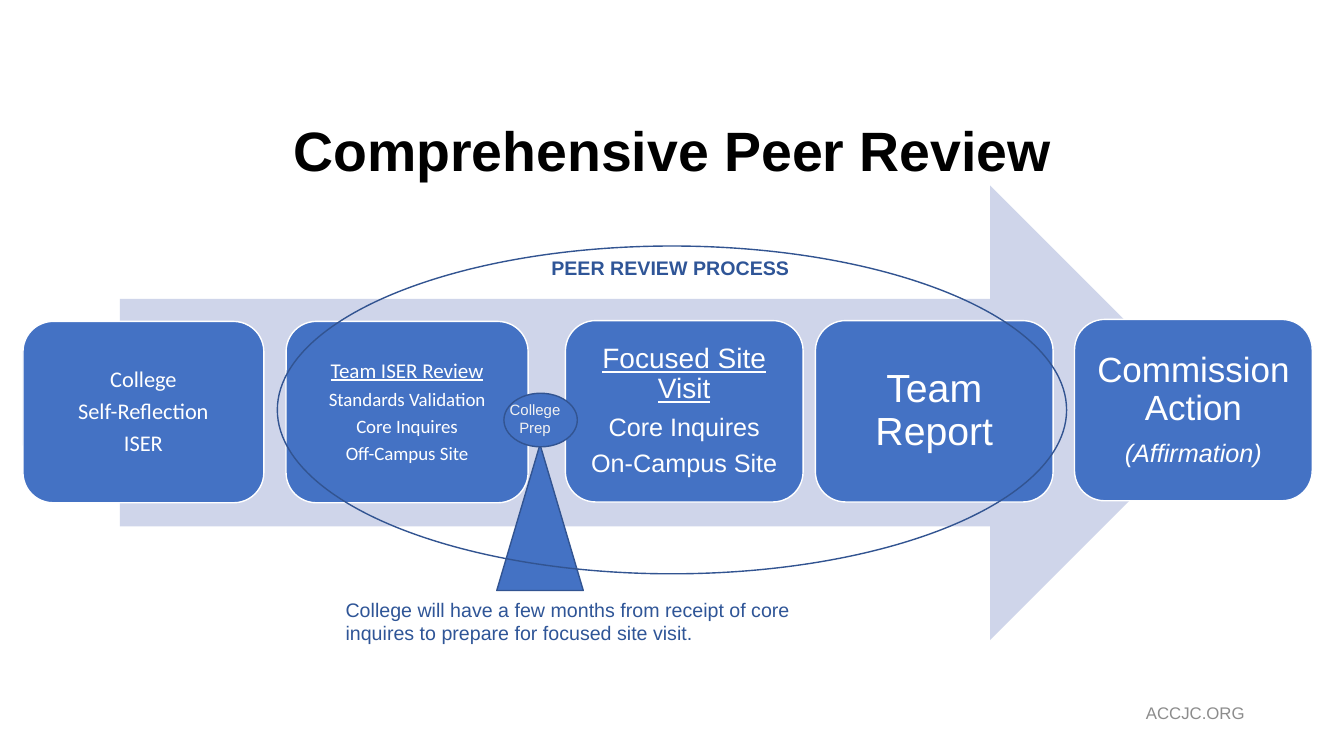
import pptx
import pptx.dml.color
import pptx.enum.shapes
import pptx.enum.text
import pptx.util

Cm = pptx.util.Cm
Pt = pptx.util.Pt
SHAPES = pptx.enum.shapes.MSO_SHAPE
ALIGN = pptx.enum.text.PP_ALIGN
ANCHOR = pptx.enum.text.MSO_ANCHOR

BLUE = "4472C4"
DARK_BLUE = "325491"
CAPTION_BLUE = "2F5597"
PALE_BLUE = "CFD5EA"
WHITE = "FFFFFF"

CARD_HEIGHT = 4.57
CARDS = [
    (0, 0.05, 6.07, 0.18, "Calibri",
     [("College", 16, ""), ("Self-Reflection", 16, ""), ("ISER", 16, "")]),
    (6.63, 0.05, 6.1, 0.16, "Calibri",
     [("Team ISER Review", 15, "underline"), ("Standards Validation", 13.5, ""),
      ("Core Inquires", 13.5, ""), ("Off-Campus Site", 13.5, "")]),
    (13.67, 0.03, 5.99, 0.21, "Arial",
     [("Focused Site Visit", 20, "underline"), ("Core Inquires", 18, ""),
      ("On-Campus Site", 18, "")]),
    (19.97, 0.03, 5.99, 0.3, "Arial", [("Team Report", 28, "")]),
    (26.5, 0, 5.99, 0.25, "Arial",
     [("Commission Action", 25, ""), ("(Affirmation)", 18, "italic")]),
]


def color(hex_string):
    """Turn a hex string into a colour."""
    return pptx.dml.color.RGBColor.from_string(hex_string)


def add_figure(slide, kind, box, fill=None, line=None):
    """Add a preset shape with an optional fill and outline."""
    shape = slide.shapes.add_shape(kind, *map(Cm, box))
    shape.shadow.inherit = False
    if fill:
        shape.fill.solid()
        shape.fill.fore_color.rgb = color(fill)
    else:
        shape.fill.background()
    if line:
        shape.line.color.rgb = color(line)
        shape.line.width = Pt(1)
    else:
        shape.line.fill.background()
    return shape


def set_insets(frame, horizontal, vertical):
    """Set the inner margins of a text frame."""
    frame.margin_left = frame.margin_right = Cm(horizontal)
    frame.margin_top = frame.margin_bottom = Cm(vertical)


def add_label(slide, box, text, size, text_color, align=ALIGN.LEFT,
              anchor=ANCHOR.TOP, bold=False, wrap=True):
    """Add a text box whose paragraphs share one Arial style."""
    frame = slide.shapes.add_textbox(*map(Cm, box)).text_frame
    frame.word_wrap = wrap
    frame.vertical_anchor = anchor
    frame.text = text
    for paragraph in frame.paragraphs:
        paragraph.alignment = align
        font = paragraph.runs[0].font
        font.name, font.size, font.bold = "Arial", Pt(size), bold
        font.color.rgb = color(text_color)
    return frame


def add_card(slide, box, inset, font_name, lines):
    """Add a rounded step card with centred lines of white text."""
    frame = add_figure(slide, SHAPES.ROUNDED_RECTANGLE, box, BLUE, WHITE).text_frame
    frame.word_wrap = True
    frame.vertical_anchor = ANCHOR.MIDDLE
    set_insets(frame, inset, inset)
    frame.text = "\n".join(text for text, size, style in lines)
    for paragraph, (text, size, style) in zip(frame.paragraphs, lines):
        paragraph.alignment = ALIGN.CENTER
        paragraph.line_spacing = 0.9
        paragraph.space_after = Pt(round(0.35 * size, 1))
        font = paragraph.runs[0].font
        font.name, font.size = font_name, Pt(size)
        font.color.rgb = color(WHITE)
        font.underline = style == "underline"
        font.italic = style == "italic"


def add_steps(slide, left, top):
    """Add the row of step cards."""
    for across, down, width, inset, font_name, lines in CARDS:
        box = (left + across, top + down, width, CARD_HEIGHT)
        add_card(slide, box, inset, font_name, lines)


def add_preparation(slide, left, top):
    """Add the preparation marker, its pointer and the caption below."""
    add_figure(slide, SHAPES.FLOWCHART_EXTRACT, (left + 0.05, top + 1.29, 2.18, 3.68),
               BLUE, DARK_BLUE)
    add_figure(slide, SHAPES.OVAL, (left + 0.23, top, 1.85, 1.35), BLUE, DARK_BLUE)
    add_label(slide, (left, top + 0.05, 2.03, 1.17), "College\nPrep", 10.7, "F2F2F2",
              ALIGN.CENTER)
    add_label(slide, (left - 4.01, top + 5.03, 13.16, 1.45),
              "College will have a few months from receipt of core inquires "
              "to prepare for focused site visit.", 14, CAPTION_BLUE)


def add_process_ring(slide, left, top, width, height):
    """Add the outlined ellipse with its heading near the top."""
    add_figure(slide, SHAPES.OVAL, (left, top, width, height), line=DARK_BLUE)
    add_label(slide, (left + (width - 6.58) / 2, top + 0.13, 6.58, 0.86),
              "PEER REVIEW PROCESS", 14, CAPTION_BLUE, bold=True, wrap=False)


def add_title(slide, box):
    """Add the centred slide title."""
    frame = add_label(slide, box, "Comprehensive Peer Review", 39.6, "000000",
                      ALIGN.CENTER, ANCHOR.MIDDLE, bold=True)
    frame.paragraphs[0].line_spacing = 0.9


def add_footer(slide, box):
    """Add the web address at the lower right."""
    frame = add_label(slide, box, "ACCJC.ORG", 12, "8C8C8C", ALIGN.RIGHT, ANCHOR.MIDDLE)
    set_insets(frame, 0.18, 0.1)


def main():
    """Build and save the slide."""
    presentation = pptx.Presentation()
    presentation.slide_width = Cm(33.87)
    presentation.slide_height = Cm(19.05)
    slide = presentation.slides.add_slide(presentation.slide_layouts[6])
    add_footer(slide, (26.95, 17.65, 4.6, 0.64))
    add_figure(slide, SHAPES.RIGHT_ARROW, (3.02, 4.67, 27.66, 11.46), PALE_BLUE)
    add_title(slide, (2.34, 3.05, 29.21, 1.65))
    add_steps(slide, 0.58, 8.05)
    add_preparation(slide, 12.47, 9.91)
    add_process_ring(slide, 6.99, 6.2, 19.89, 8.26)
    presentation.save("out.pptx")


if __name__ == "__main__":
    main()
